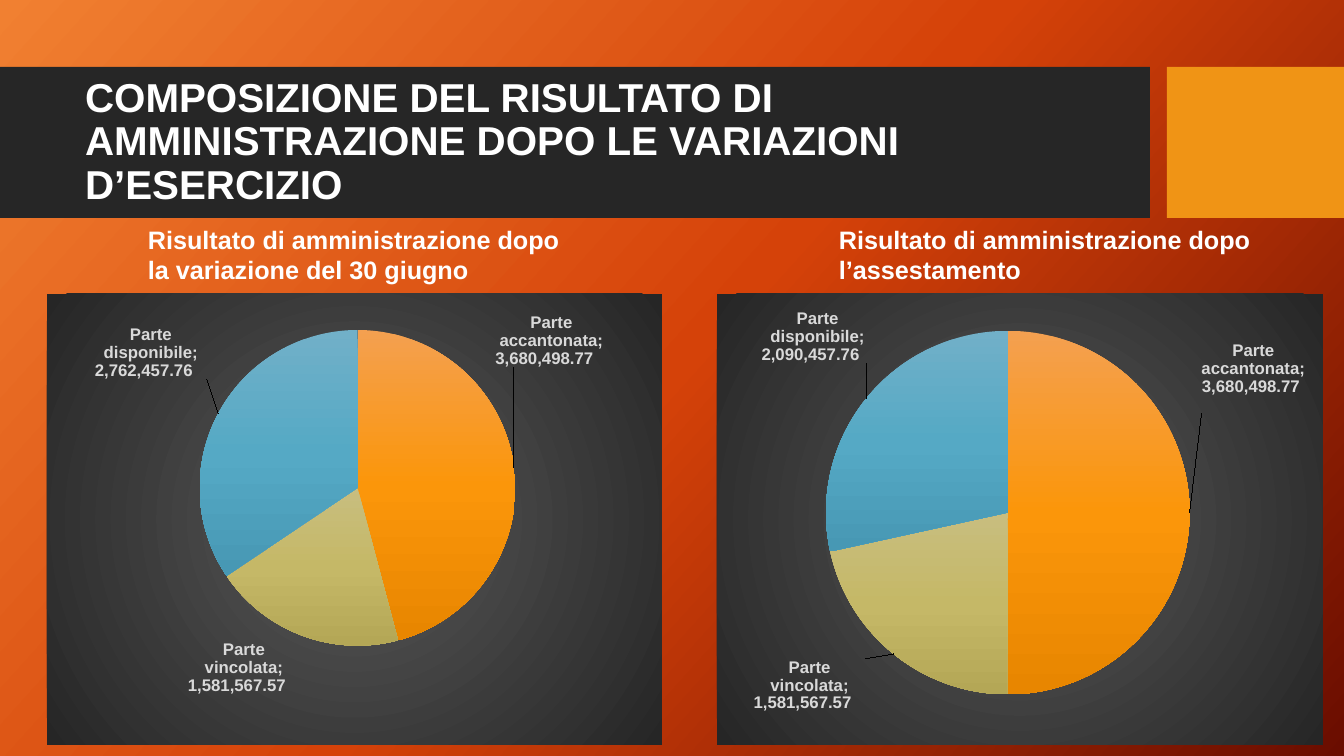
import copy
from dataclasses import dataclass
from typing import Optional

import lxml.etree
import pptx
import pptx.chart.chart
import pptx.chart.data
import pptx.dml.color
import pptx.enum.chart
import pptx.enum.shapes
import pptx.enum.text
import pptx.oxml
import pptx.oxml.ns
import pptx.slide
import pptx.text.text
import pptx.util

RGB = pptx.dml.color.RGBColor
WHITE = RGB(0xFF, 0xFF, 0xFF)
LABEL_GREY = RGB(0xD9, 0xD9, 0xD9)
BAND_DARK = RGB(0x26, 0x26, 0x26)
BAND_AMBER = RGB(0xF0, 0x94, 0x15)
BACKGROUND = (RGB(0xF1, 0x80, 0x31), RGB(0xD5, 0x42, 0x09), RGB(0x6A, 0x0D, 0x00))
CHART_AREA = (RGB(0x59, 0x59, 0x59), BAND_DARK)
SLICES = (
    (RGB(0xF4, 0xA0, 0x50), RGB(0xFB, 0x96, 0x0A), RGB(0xE8, 0x86, 0x00)),
    (RGB(0xC8, 0xBE, 0x7F), RGB(0xC5, 0xB8, 0x67), RGB(0xB4, 0xA7, 0x56)),
    (RGB(0x67, 0xB8, 0x84), RGB(0x46, 0xB4, 0x72), RGB(0x3A, 0xA4, 0x64)),
    (RGB(0x71, 0xB0, 0xC8), RGB(0x55, 0xA9, 0xC5), RGB(0x47, 0x98, 0xB4)),
)
CATEGORIES = (
    "Parte accantonata",
    "Parte vincolata",
    "Parte destinata agli investimenti",
    "Parte disponibile",
)
EMU_PER_PX = 914400 / 100.8
CHART_TOP, CHART_HEIGHT = 294, 451
HEADING_TOP, HEADING_WIDTH, HEADING_HEIGHT = 219, 433, 71


@dataclass(frozen=True)
class Band:
    left: int
    width: int
    color: RGB


@dataclass(frozen=True)
class Result:
    heading: str
    heading_left: int
    chart_left: int
    chart_width: int
    values: tuple[float, ...]
    plot: tuple[float, float, float, float]
    label_shifts: tuple[Optional[tuple[float, float]], ...]


BANDS = (Band(0, 1150, BAND_DARK), Band(1167, 177, BAND_AMBER))
RESULTS = (
    Result(
        "Risultato di amministrazione dopo la variazione del 30 giugno",
        138, 47, 615,
        (3680498.77, 1581567.57, 0, 2762457.76),
        (0.09, 0.08, 0.83, 0.7),
        ((-0.04, -0.22), (0, 0), None, (-0.01, -0.07)),
    ),
    Result(
        "Risultato di amministrazione dopo l’assestamento",
        829, 717, 606,
        (3680498.77, 1581567.57, 0, 2090457.76),
        (0.18, 0.08, 0.6, 0.81),
        ((0.01, -0.3), (-0.04, 0), None, (0.02, -0.07)),
    ),
)


def px(length: int) -> pptx.util.Emu:
    return pptx.util.Emu(round(length * EMU_PER_PX))


def box(*lengths: int) -> list[pptx.util.Emu]:
    return [px(length) for length in lengths]


def gradient(colors: tuple[RGB, ...], angle: Optional[int] = None) -> lxml.etree._Element:
    """Evenly spaced stops; linear at a clockwise angle, or circular without one."""
    stops = "".join(
        f'<a:gs pos="{100000 * i // (len(colors) - 1)}"><a:srgbClr val="{color}"/></a:gs>'
        for i, color in enumerate(colors)
    )
    if angle is None:
        direction = (
            '<a:path path="circle">'
            '<a:fillToRect l="50000" t="50000" r="50000" b="50000"/></a:path>'
        )
    else:
        direction = f'<a:lin ang="{angle * 60000}" scaled="0"/>'
    return pptx.oxml.parse_xml(
        f'<a:gradFill {pptx.oxml.ns.nsdecls("a")} rotWithShape="1">'
        f"<a:gsLst>{stops}</a:gsLst>{direction}</a:gradFill>"
    )


def chart_xml(tag: str, content: str = "") -> lxml.etree._Element:
    return pptx.oxml.parse_xml(
        f'<c:{tag} {pptx.oxml.ns.nsdecls("c", "a")}>{content}</c:{tag}>'
    )


def manual_layout(modes: str, **fractions: float) -> lxml.etree._Element:
    sizes = "".join(f'<c:{key} val="{value}"/>' for key, value in fractions.items())
    return chart_xml("layout", f"<c:manualLayout>{modes}{sizes}</c:manualLayout>")


def format_text(paragraph: pptx.text.text._Paragraph, size: float) -> None:
    for run in paragraph.runs:
        run.font.name, run.font.size, run.font.bold = "Arial", pptx.util.Pt(size), True
        run.font.color.rgb = WHITE


def paint_background(slide: pptx.slide.Slide) -> None:
    slide.background.fill.solid()
    solid = slide.element.xpath(".//p:bgPr/a:solidFill")[0]
    solid.getparent().replace(solid, gradient(BACKGROUND, 42))


def add_title(slide: pptx.slide.Slide) -> None:
    title = slide.shapes.title
    for band in BANDS:
        rect = slide.shapes.add_shape(
            pptx.enum.shapes.MSO_SHAPE.RECTANGLE, *box(band.left, 67, band.width, 151)
        )
        rect.shadow.inherit = False
        rect.fill.solid()
        rect.fill.fore_color.rgb = band.color
        rect.line.fill.background()
        rect.element.addnext(title.element)
    title.left, title.top, title.width, title.height = box(75, 83, 1059, 119)
    frame = title.text_frame
    frame.text = "COMPOSIZIONE DEL RISULTATO DI AMMINISTRAZIONE DOPO LE VARIAZIONI D’ESERCIZIO"
    frame.word_wrap = True
    frame.auto_size = pptx.enum.text.MSO_AUTO_SIZE.NONE
    frame.vertical_anchor = pptx.enum.text.MSO_ANCHOR.MIDDLE
    frame.paragraphs[0].alignment = pptx.enum.text.PP_ALIGN.LEFT
    frame.paragraphs[0].line_spacing = 0.9
    format_text(frame.paragraphs[0], 28.8)


def add_heading(slide: pptx.slide.Slide, result: Result) -> None:
    heading = slide.shapes.add_textbox(
        *box(result.heading_left, HEADING_TOP, HEADING_WIDTH, HEADING_HEIGHT)
    )
    frame = heading.text_frame
    frame.text = result.heading
    frame.word_wrap = True
    frame.auto_size = pptx.enum.text.MSO_AUTO_SIZE.SHAPE_TO_FIT_TEXT
    format_text(frame.paragraphs[0], 18)


def add_labels(chart: pptx.chart.chart.Chart, result: Result) -> None:
    labels = chart.plots[0].series[0].data_labels
    labels.show_value = labels.show_category_name = True
    labels.number_format, labels.number_format_is_linked = r"#,##0.00\ _€", False
    labels.position = pptx.enum.chart.XL_LABEL_POSITION.OUTSIDE_END
    labels.font.name, labels.font.size, labels.font.bold = "Arial", pptx.util.Pt(12), True
    labels.font.color.rgb = LABEL_GREY

    group = chart.element.xpath(".//c:ser/c:dLbls")[0]
    for leader in group.xpath("c:showLeaderLines"):
        group.remove(leader)
    group.append(chart_xml("separator", "; "))
    shared = list(group)
    for i, shift in enumerate(result.label_shifts):
        label = chart_xml("dLbl", f'<c:idx val="{i}"/>')
        if shift is None:
            label.append(pptx.oxml.parse_xml(
                f'<c:delete {pptx.oxml.ns.nsdecls("c")} val="1"/>'
            ))
        else:
            label.append(manual_layout("", x=shift[0], y=shift[1]))
            label.extend(copy.deepcopy(shared))
        group.insert(i, label)


def add_pie(slide: pptx.slide.Slide, result: Result) -> None:
    data = pptx.chart.data.CategoryChartData()
    data.categories = CATEGORIES
    data.add_series("Series 1", result.values)
    chart = slide.shapes.add_chart(
        pptx.enum.chart.XL_CHART_TYPE.PIE,
        *box(result.chart_left, CHART_TOP, result.chart_width, CHART_HEIGHT),
        data,
    ).chart
    chart.has_title = chart.has_legend = False
    chart.font.name, chart.font.size = "Lato", pptx.util.Pt(10)
    chart.font.color.rgb = WHITE
    area = chart_xml("spPr", "<a:ln><a:noFill/></a:ln>")
    area.insert(0, gradient(CHART_AREA))
    chart.element.xpath("c:chart")[0].addnext(area)

    plot_area = chart.element.xpath(".//c:plotArea")[0]
    for layout in plot_area.xpath("c:layout"):
        plot_area.remove(layout)
    modes = '<c:layoutTarget val="inner"/><c:xMode val="edge"/><c:yMode val="edge"/>'
    plot_area.insert(0, manual_layout(modes, **dict(zip("xywh", result.plot))))

    series = chart.plots[0].series[0]
    for i, colors in enumerate(SLICES):
        slice_format = series.points[i].format
        slice_format.fill.solid()
        slice_format.line.fill.background()
        solid = chart.element.xpath(f".//c:dPt[c:idx/@val={i}]/c:spPr/a:solidFill")[0]
        solid.getparent().replace(solid, gradient(colors, 90))
    add_labels(chart, result)


def main() -> None:
    deck = pptx.Presentation()
    deck.slide_width, deck.slide_height = box(1344, 756)
    slide = deck.slides.add_slide(deck.slide_layouts[5])
    paint_background(slide)
    add_title(slide)
    for result in RESULTS:
        add_pie(slide, result)
        add_heading(slide, result)
    deck.save("out.pptx")


if __name__ == "__main__":
    main()
